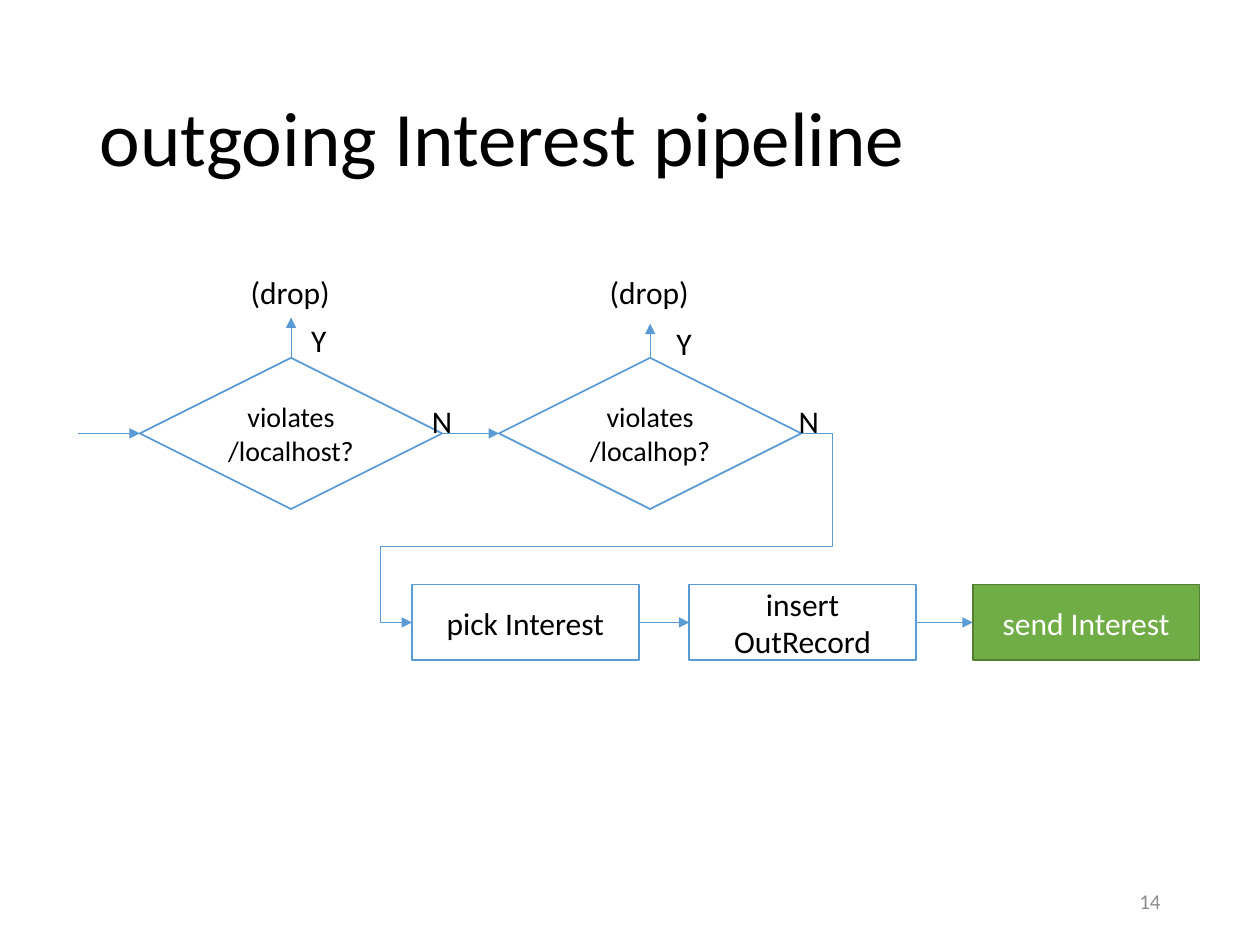
"""Build the outgoing Interest pipeline slide on a grid of 100 columns by 75 rows."""
from lxml import etree
from pptx import Presentation
from pptx import util as u
from pptx.dml.color import RGBColor
from pptx.enum import shapes, text
from pptx.oxml.ns import qn

COLS, ROWS = 100, 75
BLUE, GREEN, MOSS = "5B9BD5", "70AD47", "538035"
BLACK, WHITE, GREY = "000000", "FFFFFF", "8C8C8C"
MID = text.MSO_ANCHOR.MIDDLE
LEFT, RIGHT, CENTER = text.PP_ALIGN.LEFT, text.PP_ALIGN.RIGHT, text.PP_ALIGN.CENTER


def cells(*nums):
    """Turn grid counts into lengths."""
    return [u.Inches(n / 10) for n in nums]


def paint(part, tone):
    """Give a fill, line fill or font a solid colour."""
    if hasattr(part, "solid"):
        part.solid()
        part = part.fore_color
    else:
        part = part.color
    part.rgb = RGBColor.from_string(tone)


def write(shape, words, size, tone=BLACK, align=LEFT, anchor=MID, wrap=True):
    """Set the words of a shape and format them."""
    frame = shape.text_frame
    frame.text = words
    frame.word_wrap = wrap
    frame.auto_size = text.MSO_AUTO_SIZE.NONE
    frame.vertical_anchor = anchor
    line = frame.paragraphs[0]
    line.alignment = align
    font = line.runs[0].font
    font.name, font.size = "Calibri", u.Pt(size)
    paint(font, tone)
    return line


def label(slide, x, y, wide, words):
    """Place a short unwrapped label."""
    box = slide.shapes.add_textbox(*cells(x, y, wide, 4))
    write(box, words, 18, anchor=text.MSO_ANCHOR.TOP, wrap=False)


def node(slide, kind, box, words, size, fill=WHITE, edge=BLUE, tone=BLACK):
    """Place a flow chart node with centred words."""
    shape = slide.shapes.add_shape(kind, *cells(*box))
    shape.shadow.inherit = False
    paint(shape.fill, fill)
    paint(shape.line, edge)
    shape.line.width = u.Pt(1)
    write(shape, words, size, tone, CENTER)


def arrow(slide, start, end, bends=()):
    """Draw an arrow, with five legs when bends are given."""
    kind = shapes.MSO_CONNECTOR.ELBOW if bends else shapes.MSO_CONNECTOR.STRAIGHT
    link = slide.shapes.add_connector(kind, *cells(*start, *end))
    paint(link.line, BLUE)
    link.line.width = u.Pt(0.5)
    props = link._element.spPr
    etree.SubElement(props.find(qn("a:ln")), qn("a:tailEnd"), type="triangle")
    etree.SubElement(props, qn("a:effectLst"))
    if bends:
        geom = props.find(qn("a:prstGeom"))
        geom.set("prst", "bentConnector5")
        guides = geom.find(qn("a:avLst"))
        if guides is None:
            guides = etree.SubElement(geom, qn("a:avLst"))
        for i, share in enumerate(bends, 1):
            etree.SubElement(guides, qn("a:gd"), name=f"adj{i}",
                             fmla=f"val {round(share * 100000)}")


def check(slide, box, words, rise, yes, no):
    """Place a decision with its drop exit and its Y and N labels."""
    x, y, wide, high = box
    node(slide, shapes.MSO_SHAPE.FLOWCHART_DECISION, box, words, 16)
    arrow(slide, (x + wide / 2, y), (x + wide / 2, y - rise))
    label(slide, x + 7.8, y - 7.2, 8.4, "(drop)")
    label(slide, x + yes[0], y + yes[1], 3.2, "Y")
    label(slide, x + no, y + 3, 3.6, "N")


def checks(slide, box):
    """Place the row of decisions, leaving by its right end."""
    x, y, wide, high = box
    step, size = 28.5, 24
    mid = y + high / 2
    arrow(slide, (x - 4.9, mid), (x, mid))
    arrow(slide, (x + size, mid), (x + step, mid))
    check(slide, (x, y, size, high), "violates /localhost?", 3.2, (12.6, -3.4), 22.2)
    check(slide, (x + step, y, size, high), "violates /localhop?", 2.7, (13.1, -3.2), 22.8)


def steps(slide, box):
    """Place the row of actions, joined by arrows."""
    x, y, wide, high = box
    size, mid = 18, y + high / 2
    plain, final = (WHITE, BLUE, BLACK), (GREEN, MOSS, WHITE)
    row = [(0, "pick Interest", plain), (22, "insert OutRecord", plain),
           (44.5, "send Interest", final)]
    for shift, words, look in row:
        node(slide, shapes.MSO_SHAPE.RECTANGLE, (x + shift, y, size, high), words, 18, *look)
    for (near, *_), (far, *_) in zip(row, row[1:]):
        arrow(slide, (x + near + size, mid), (x + far, mid))


def head(slide, box):
    """Place the title."""
    title = slide.shapes.title
    title.left, title.top, title.width, title.height = cells(*box)
    write(title, "outgoing Interest pipeline", 44).line_spacing = 0.9


def foot(slide, box):
    """Place the slide number."""
    write(slide.shapes.add_textbox(*cells(*box)), "14", 12, GREY, RIGHT)


def main():
    """Build and save the slide."""
    deck = Presentation()
    deck.slide_width, deck.slide_height = cells(COLS, ROWS)
    slide = deck.slides.add_slide(deck.slide_layouts[5])
    top, low = (11.1, 28.4, 52.5, 12), (32.7, 46.4, 62.5, 6)
    head(slide, (6.9, 4, 86.2, 14.5))
    checks(slide, top)
    steps(slide, low)
    leave = top[0] + top[2], top[1] + top[3] / 2
    enter = low[0], low[1] + low[3] / 2
    out = 2.5 / (leave[0] - enter[0])
    arrow(slide, leave, enter, (-out, 0.6, 1 + out))
    foot(slide, (70.6, 69.5, 22.5, 4))
    deck.save("out.pptx")


if __name__ == "__main__":
    main()
